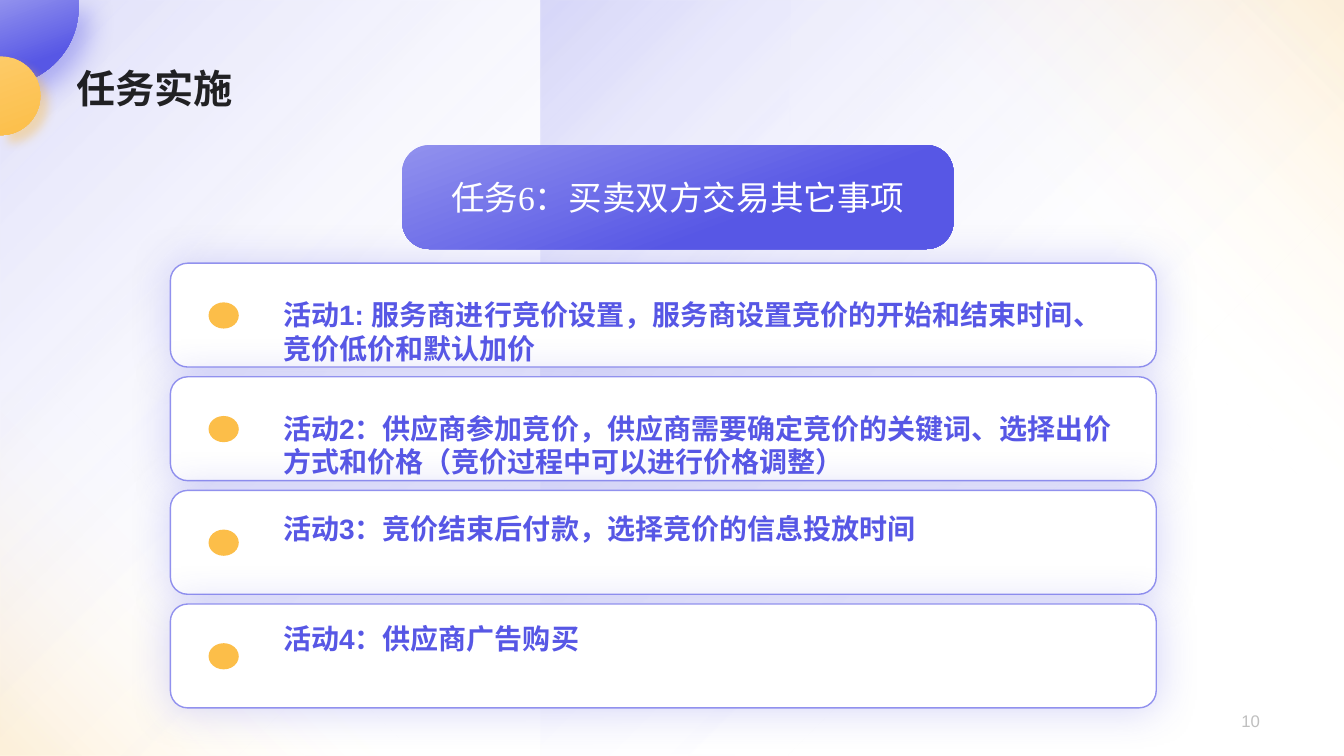
from dataclasses import dataclass
from math import cos, radians, sin
from typing import Optional

from lxml.etree import SubElement
from pptx import Presentation
from pptx.dml.color import RGBColor
from pptx.enum.shapes import MSO_SHAPE as Shape
from pptx.enum.text import MSO_ANCHOR as Anchor, MSO_AUTO_SIZE as AutoSize, PP_ALIGN as Align
from pptx.oxml.ns import qn
from pptx.util import Pt


@dataclass(frozen=True)
class Theme:
    indigo: str = "5757E5"
    lilac: str = "9191EE"
    amber: str = "FCBE49"
    light_amber: str = "FDCB67"
    white: str = "FFFFFF"
    black: str = "000000"
    grey: str = "BFBFBF"
    sans: str = "Arial"
    serif: str = "Times New Roman"
    title_size: int = 28
    task_size: int = 24
    activity_size: int = 20
    number_size: int = 12


@dataclass(frozen=True)
class Box:
    left: float
    top: float
    width: float
    height: float

    def emu(self) -> tuple:
        return Pt(self.left), Pt(self.top), Pt(self.width), Pt(self.height)


@dataclass(frozen=True)
class Stop:
    position: int
    color: str
    alpha: int = 100


@dataclass(frozen=True)
class Gradient:
    stops: tuple
    angle: Optional[int] = None  # None spreads from the top left corner


@dataclass(frozen=True)
class Glow:
    color: str
    alpha: int
    blur: float
    distance: float = 0
    angle: int = 0


@dataclass(frozen=True)
class Wash:
    box: Box
    gradient: Gradient
    flipped: bool = False


@dataclass(frozen=True)
class Disc:
    center: tuple
    radius: float
    first_angle: int
    corners: tuple  # outline points on the slide edge
    gradient: Gradient
    glow: Glow


@dataclass(frozen=True)
class Activity:
    text: str
    text_offset: float
    text_height: float


THEME = Theme()
VIOLET_WASH = Gradient((Stop(0, THEME.indigo, 20), Stop(65, THEME.white, 0)))
AMBER_WASH = Gradient((Stop(45, THEME.white, 0), Stop(98, THEME.amber, 20)), 315)
WASHES = (
    Wash(Box(0, 0, 564.5, 540), VIOLET_WASH),
    Wash(Box(626, 0, 334, 348.5), AMBER_WASH),
    Wash(Box(-1.4, 280.8, 288.7, 259.2), AMBER_WASH, True),
    Wash(Box(386.4, 0, 573.6, 540), VIOLET_WASH, True),
)
DISCS = (
    Disc((0, 5), 56.2, -5, ((0, 0), (55.7, 0)),
         Gradient((Stop(0, THEME.lilac), Stop(67, THEME.indigo)), 70),
         Glow(THEME.indigo, 40, 19, 11, 45)),
    Disc((0.7, 68.4), 28.1, -90, ((0, 96.5), (0, 40.3)),
         Gradient((Stop(0, THEME.light_amber), Stop(100, THEME.amber)), 70),
         Glow(THEME.amber, 40, 7, 8, 45)),
)
ACTIVITIES = (
    Activity("活动1: 服务商进行竞价设置，服务商设置竞价的开始和结束时间、竞价低价和默认加价", 20.9, 55.7),
    Activity("活动2：供应商参加竞价，供应商需要确定竞价的关键词、选择出价方式和价格（竞价过程中可以进行价格调整）", 20.9, 55.7),
    Activity("活动3：竞价结束后付款，选择竞价的信息投放时间", 11.5, 31.5),
    Activity("活动4：供应商广告购买", 9.2, 31.5),
)
FIRST_CARD = Box(121.7, 188, 704.2, 74.2)
CARD_PITCH = 81.15


def add_color(parent, color: str, alpha: int) -> None:
    node = SubElement(parent, qn("a:srgbClr"), val=color)
    if alpha < 100:
        SubElement(node, qn("a:alpha"), val=str(alpha * 1000))


def paint(shape, fill, line: Optional[str] = None, glow: Optional[Glow] = None) -> None:
    """Give a shape its plain or gradient fill, its outline and its shadow."""
    properties = shape.element.spPr
    if isinstance(fill, Gradient):
        shape.fill.gradient()
        node = properties.find(qn("a:gradFill"))
        node.clear()
        node.set("rotWithShape", "1")
        stops = SubElement(node, qn("a:gsLst"))
        for stop in fill.stops:
            add_color(SubElement(stops, qn("a:gs"), pos=str(stop.position * 1000)), stop.color, stop.alpha)
        if fill.angle is None:
            spread = SubElement(node, qn("a:path"), path="circle")
            SubElement(spread, qn("a:fillToRect"), r="100000", b="100000")
        else:
            SubElement(node, qn("a:lin"), ang=str(fill.angle * 60000), scaled="0")
    else:
        shape.fill.solid()
        shape.fill.fore_color.rgb = RGBColor.from_string(fill)
    if line:
        shape.line.color.rgb = RGBColor.from_string(line)
        shape.line.width = Pt(1)
    else:
        shape.line.fill.background()
    shape.shadow.inherit = False
    if glow:
        shadow = SubElement(properties.find(qn("a:effectLst")), qn("a:outerShdw"),
                            blurRad=str(Pt(glow.blur)), dist=str(Pt(glow.distance)),
                            dir=str(glow.angle * 60000), algn="ctr", rotWithShape="0")
        add_color(shadow, glow.color, glow.alpha)


def write(shape, text: str, *, size: int, color: str, font: str = THEME.sans, bold: bool = False,
          align=Align.LEFT, anchor=Anchor.TOP, fit=AutoSize.NONE, alpha: int = 100) -> None:
    frame = shape.text_frame
    frame.word_wrap, frame.auto_size, frame.vertical_anchor = True, fit, anchor
    paragraph = frame.paragraphs[0]
    paragraph.alignment = align
    run = paragraph.add_run()
    run.text = text
    run.font.name, run.font.size, run.font.bold = font, Pt(size), bold
    run.font.color.rgb = RGBColor.from_string(color)
    if alpha < 100:
        tint = next(shape.element.txBody.iter(qn("a:srgbClr")))
        SubElement(tint, qn("a:alpha"), val=str(alpha * 1000))


def draw_wash(shapes, wash: Wash) -> None:
    backdrop = shapes.add_shape(Shape.RECTANGLE, *wash.box.emu())
    paint(backdrop, wash.gradient)
    if wash.flipped:
        transform = backdrop.element.spPr.find(qn("a:xfrm"))
        transform.set("flipH", "1")
        transform.set("flipV", "1")


def draw_disc(shapes, disc: Disc) -> None:
    arc = [(disc.center[0] + disc.radius * cos(radians(angle)),
            disc.center[1] + disc.radius * sin(radians(angle)))
           for angle in range(disc.first_angle, 91, 5)]
    start, *outline = [(Pt(x), Pt(y)) for x, y in (*disc.corners, *arc)]
    builder = shapes.build_freeform(*start)
    builder.add_line_segments(outline, close=True)
    paint(builder.convert_to_shape(), disc.gradient, glow=disc.glow)


def draw_activity(shapes, activity: Activity, top: float) -> None:
    parts = shapes.add_group_shape().shapes
    card_box = Box(FIRST_CARD.left, top, FIRST_CARD.width, FIRST_CARD.height)
    card = parts.add_shape(Shape.ROUNDED_RECTANGLE, *card_box.emu())
    paint(card, THEME.white, THEME.lilac, Glow(THEME.indigo, 25, 30))
    label = parts.add_textbox(*Box(195.1, top + activity.text_offset, 607, activity.text_height).emu())
    write(label, activity.text, size=THEME.activity_size, color=THEME.indigo, bold=True,
          fit=AutoSize.SHAPE_TO_FIT_TEXT)
    bullet = parts.add_shape(Shape.OVAL, *Box(149, top + 28, 21.6, 18.7).emu())
    paint(bullet, THEME.amber)


def main() -> None:
    deck = Presentation()
    deck.slide_width, deck.slide_height = Pt(960), Pt(540)
    shapes = deck.slides.add_slide(deck.slide_layouts[5]).shapes

    # Backdrop and corner discs
    for wash in WASHES:
        draw_wash(shapes, wash)
    for disc in DISCS:
        draw_disc(shapes, disc)

    # Title, raised above the backdrop
    title = shapes.title
    title.element.getparent().append(title.element)
    title.left, title.top, title.width, title.height = Box(51.8, 46, 427.7, 39.6).emu()
    write(title, "任务实施", size=THEME.title_size, color=THEME.black, bold=True, alpha=85)
    title.text_frame.margin_left = Pt(2.9)
    title.text_frame.paragraphs[0].line_spacing = 0.9

    # Page number
    page_number = shapes.add_textbox(*Box(691.2, 500.4, 216, 28.8).emu())
    write(page_number, "10", size=THEME.number_size, color=THEME.grey, align=Align.RIGHT, anchor=Anchor.MIDDLE)

    # Activity cards
    for index, activity in enumerate(ACTIVITIES):
        draw_activity(shapes, activity, FIRST_CARD.top + index * CARD_PITCH)

    # Task banner
    task = shapes.add_shape(Shape.ROUNDED_RECTANGLE, *Box(287.3, 103.7, 393.8, 74.2).emu())
    task.adjustments[0] = 0.26
    paint(task, Gradient((Stop(0, THEME.lilac), Stop(66, THEME.indigo)), 70))
    write(task, "任务6：买卖双方交易其它事项", size=THEME.task_size, color=THEME.white,
          font=THEME.serif, align=Align.CENTER, anchor=Anchor.MIDDLE)

    deck.save("out.pptx")


if __name__ == "__main__":
    main()
